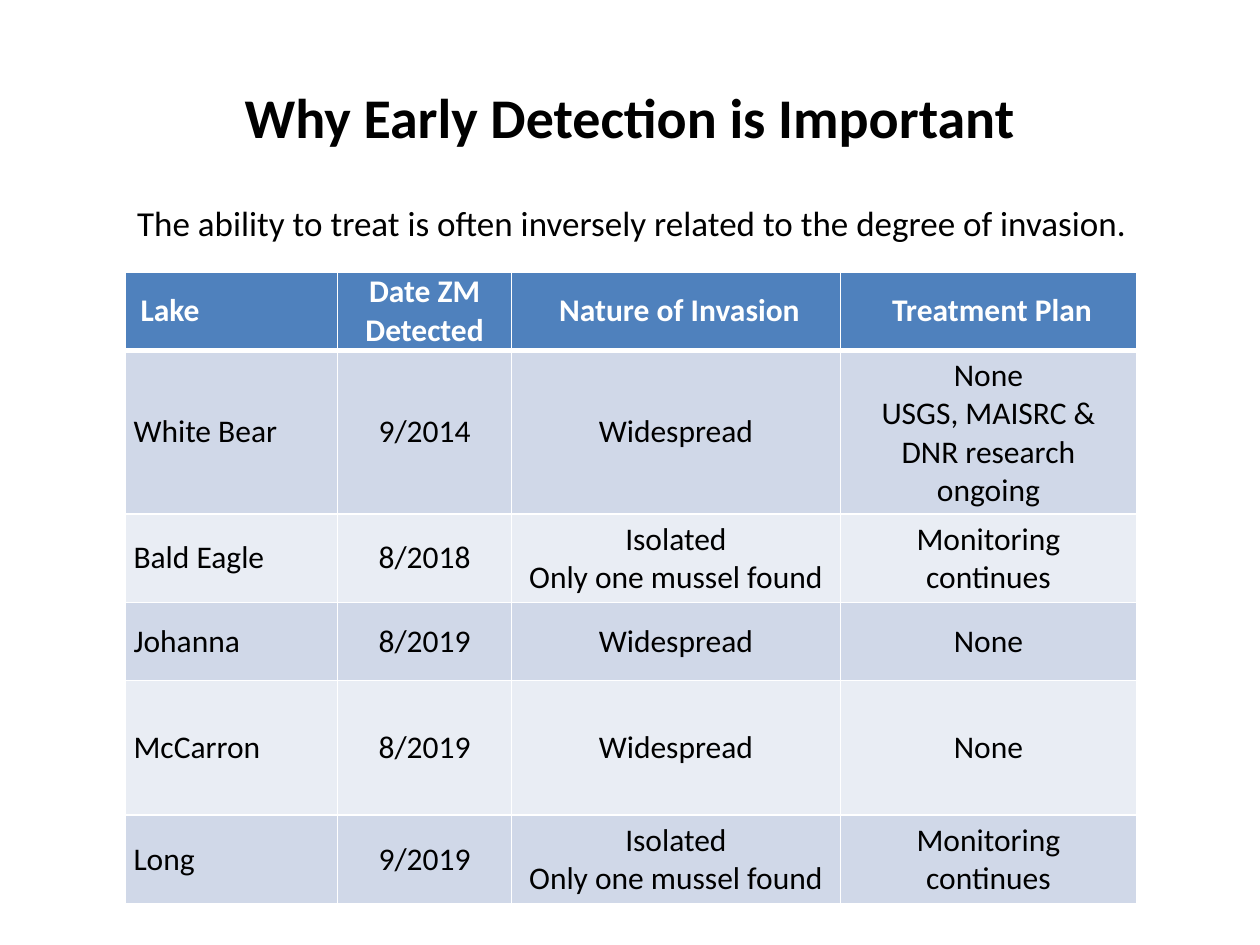
from lxml import etree
from pptx import Presentation
from pptx.dml.color import RGBColor
from pptx.enum.text import MSO_ANCHOR, PP_ALIGN
from pptx.oxml.ns import qn
from pptx.util import Inches, Pt

LEFT, CENTER = PP_ALIGN.LEFT, PP_ALIGN.CENTER
TOP, MIDDLE = MSO_ANCHOR.TOP, MSO_ANCHOR.MIDDLE

WHITE, BLACK = "FFFFFF", "000000"
HEADER_FILL, BAND_FILLS = "4F81BD", ("D0D8E8", "E9EDF4")
TABLE_LEFT, TABLE_TOP = 0.99, 2.16
COLUMN_WIDTHS = [1.69, 1.38, 2.61, 2.35]
ROW_HEIGHTS = [0.62, 0.62, 0.62, 0.62, 1.07, 0.62]
ISOLATED = "Isolated\nOnly one mussel found"
LAKES = [
    [" Lake", "Date ZM Detected", " Nature of Invasion", " Treatment Plan"],
    ["White Bear", "9/2014", "Widespread", "None\nUSGS, MAISRC & DNR research ongoing"],
    ["Bald Eagle", "8/2018", ISOLATED, "Monitoring continues"],
    ["Johanna", "8/2019", "Widespread", "None"],
    ["McCarron", "8/2019", "Widespread", "None"],
    ["Long", "9/2019", ISOLATED, "Monitoring continues"],
]


def color(value):
    return RGBColor.from_string(value)


def write(frame, text, size, text_color, bold, align):
    """Fill a text frame, one paragraph for each line of the text."""
    frame.text = text
    for para in frame.paragraphs:
        para.alignment = align
        for span in para.runs:
            formats = {"name": "Calibri", "size": Pt(size), "bold": bold}
            for name, value in formats.items():
                setattr(span.font, name, value)
            span.font.color.rgb = color(text_color)


deck = Presentation()
deck.slide_width, deck.slide_height = Inches(10), Inches(7.5)
page = deck.slides.add_slide(deck.slide_layouts[6])

# Title and the line below it
for place, text, size, bold, align, anchor in [
    ((0.5, 0.3, 9, 1.25), "Why Early Detection is Important", 32, True, CENTER, MIDDLE),
    ((TABLE_LEFT, 1.55, 8.25, 0.44),
     "The ability to treat is often inversely related to the degree of invasion.",
     20, False, LEFT, TOP),
]:
    box = page.shapes.add_textbox(*map(Inches, place))
    box.text_frame.word_wrap = True
    box.text_frame.vertical_anchor = anchor
    write(box.text_frame, text, size, BLACK, bold, align)

# Table of lakes
table = page.shapes.add_table(
    len(LAKES), len(COLUMN_WIDTHS), Inches(TABLE_LEFT), Inches(TABLE_TOP),
    Inches(sum(COLUMN_WIDTHS)), Inches(sum(ROW_HEIGHTS))).table
for column, width in zip(table.columns, COLUMN_WIDTHS):
    column.width = Inches(width)
for row, height in zip(table.rows, ROW_HEIGHTS):
    row.height = Inches(height)

for r, lake in enumerate(LAKES):
    header = r == 0
    fill = HEADER_FILL if header else BAND_FILLS[(r - 1) % 2]
    borders = {"a:lnL": 1, "a:lnR": 1, "a:lnT": 3 if r == 1 else 1, "a:lnB": 3 if header else 1}
    for c, text in enumerate(lake):
        cell = table.cell(r, c)
        cell.vertical_anchor = MIDDLE
        if header or c < 2:
            margins = {"margin_left": 0.07, "margin_right": 0.07, "margin_top": 0, "margin_bottom": 0}
            for name, value in margins.items():
                setattr(cell, name, Inches(value))
        write(cell.text_frame, text, 18, WHITE if header else BLACK, header,
              CENTER if c else LEFT)
        properties = cell._tc.get_or_add_tcPr()
        for tag, width in borders.items():
            line = etree.SubElement(properties, qn(tag), w=str(Pt(width)))
            solid = etree.SubElement(line, qn("a:solidFill"))
            etree.SubElement(solid, qn("a:srgbClr"), val=WHITE)
        cell.fill.solid()
        cell.fill.fore_color.rgb = color(fill)

deck.save("out.pptx")
